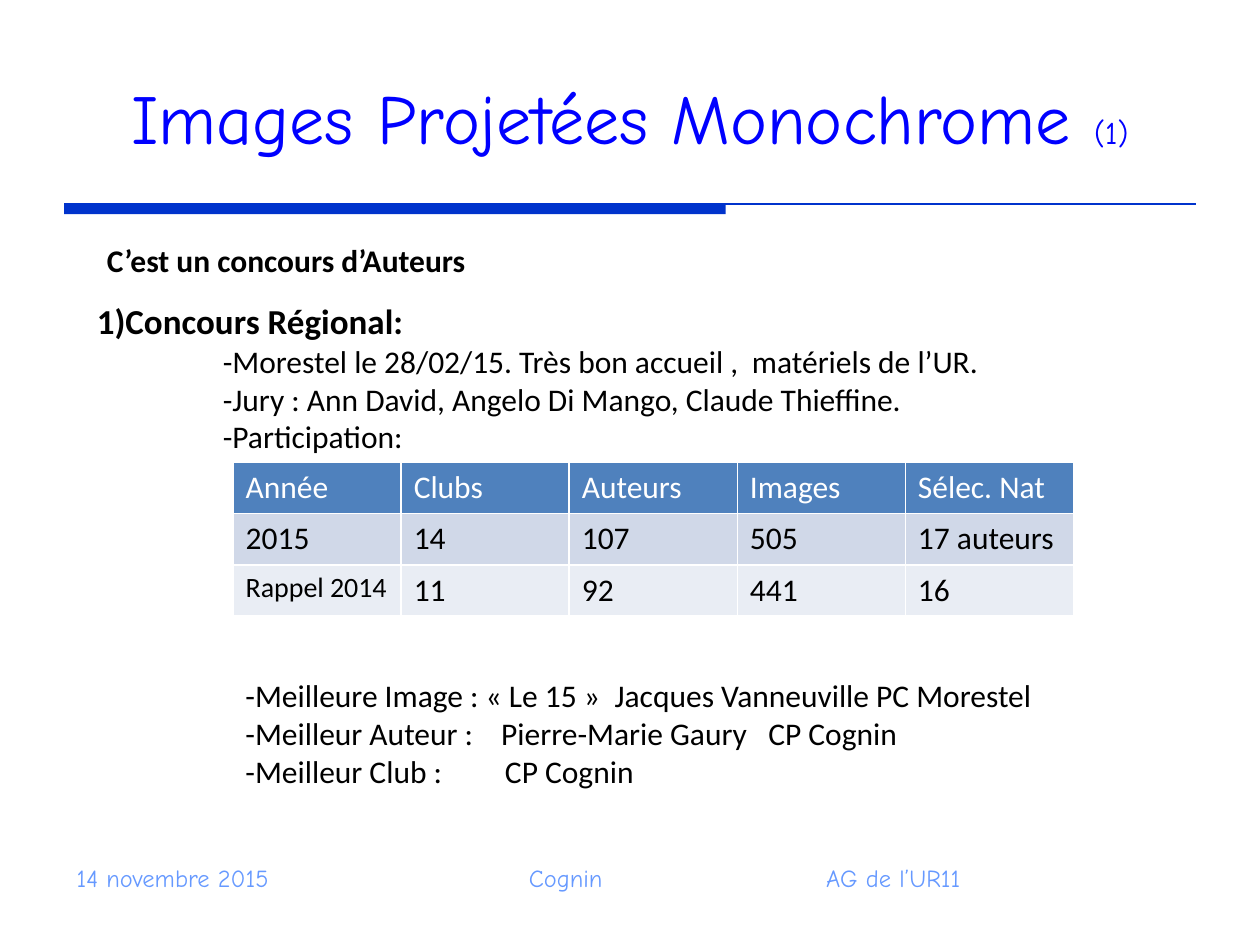
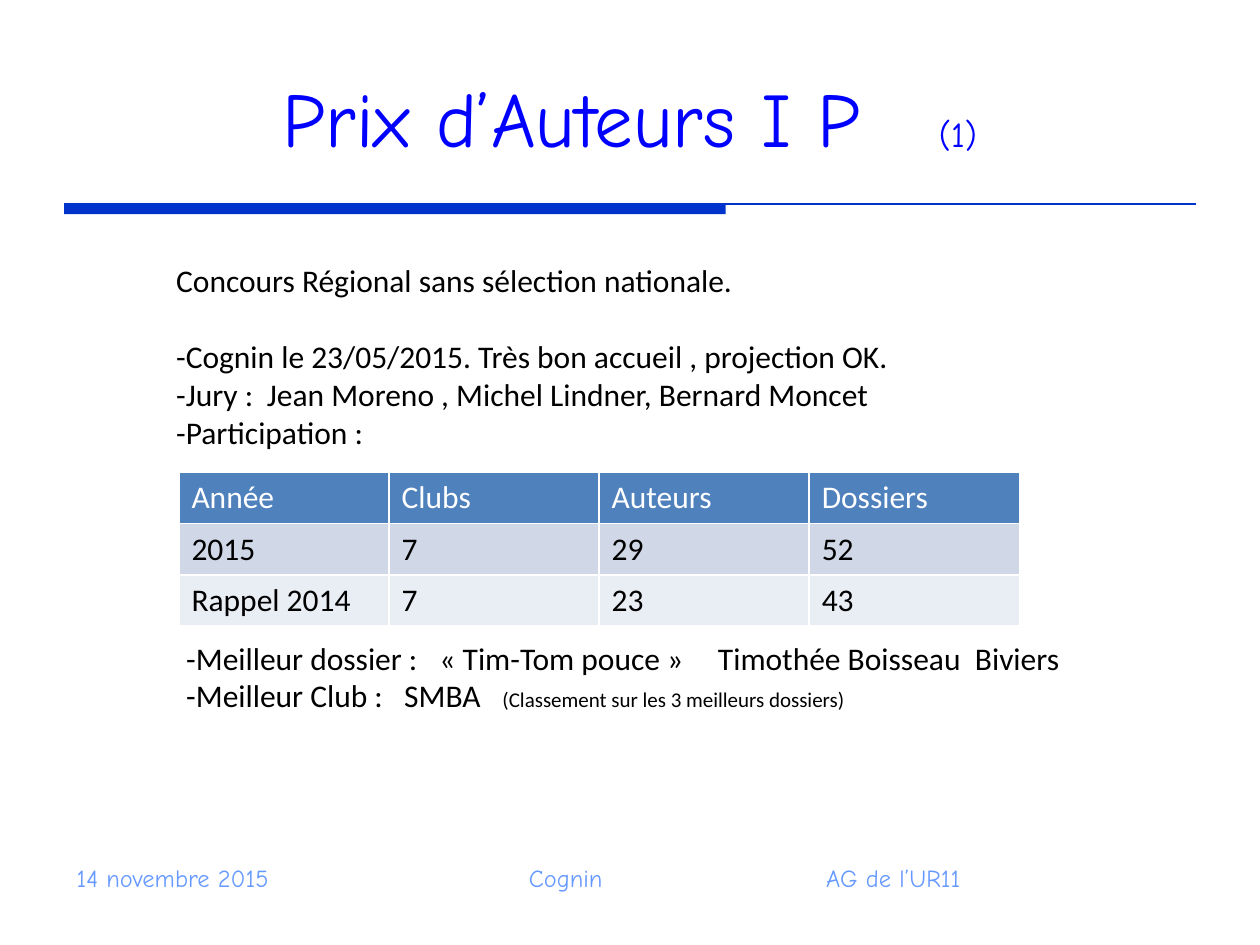
from lxml.etree import SubElement as Sub
from pptx import Presentation
from pptx.dml.color import RGBColor as RGB
from pptx.enum.shapes import MSO_CONNECTOR as LINK, MSO_SHAPE as SHAPE
from pptx.enum.text import MSO_ANCHOR as ANCHOR, PP_ALIGN as ALIGN
from pptx.oxml.ns import qn
from pptx.util import Inches, Pt

BLUE = RGB(0x00, 0x00, 0xFF)
BAND = RGB(0x00, 0x33, 0xCC)
PALE = RGB(0x66, 0x99, 0xFF)
BLACK = RGB(0x00, 0x00, 0x00)
WHITE = RGB(0xFF, 0xFF, 0xFF)
ROWS = [RGB(0x4F, 0x81, 0xBD), RGB(0xD0, 0xD8, 0xE8), RGB(0xE9, 0xED, 0xF4)]
BODY, COMIC = "Calibri", "Comic Neue"

deck = Presentation()
deck.slide_width, deck.slide_height = Inches(10), Inches(7.5)
# The grid has 100 columns and 100 rows.
COL, ROW = deck.slide_width / 100, deck.slide_height / 100


def frame(slide, x, y, w, h):
    """Add a wrapping text box, placed in grid units, and return its frame."""
    box = slide.shapes.add_textbox(*map(int, (x * COL, y * ROW, w * COL, h * ROW)))
    box.text_frame.word_wrap = True
    return box.text_frame


def write(tf, text, size=18, face=BODY, color=BLACK, bold=False, align=ALIGN.LEFT,
          stops=(), before=0, tail="", small=12, spread=0):
    """Add a paragraph; stops are in columns, spread widens the last space, tail is small."""
    para = tf.paragraphs[0] if not tf.text else tf.add_paragraph()
    para.alignment = align
    if before:
        para.space_before = Pt(before)
    if stops:
        tabs = Sub(para._p.get_or_add_pPr(), qn("a:tabLst"))
        for stop in stops:
            Sub(tabs, qn("a:tab"), pos=str(int(stop * COL)), algn="l")
    for part, pts, wide in ((text, size, 0), (" " if spread else "", size, spread),
                            (tail, small, 0)):
        if part:
            run = para.add_run()
            run.text = part
            font = run.font
            font.size, font.name, font.bold = Pt(pts), face, bold
            font.color.rgb = color
            if wide:
                run._r.get_or_add_rPr().set("spc", str(wide * 100))


pages = [
    dict(title="Images Projetées Monochrome ", size=40, small=18, spread=0,
         left=18.5, top=48.93,
         grid=[["Année", "Clubs", "Auteurs", "Images", "Sélec. Nat"],
               ["2015", "14", "107", "505", "17 auteurs"],
               ["Rappel 2014", "11", "92", "441", "16"]],
         label=16,
         texts=[
             ((6.7, 31.07, 80, 22), [
                 ("1)Concours Régional:", dict(size=20, bold=True)),
                 ("\t-Morestel le 28/02/15. Très bon accueil ,\tmatériels de l’UR.",
                  dict(stops=(10, 52))),
                 ("\t-Jury : Ann David, Angelo Di Mango, Claude Thieffine.",
                  dict(stops=(10,))),
                 ("\t-Participation:", dict(stops=(10,)))]),
             ((7.5, 24.8, 35, 5.33), [
                 ("C’est un concours d’Auteurs", dict(bold=True))]),
             ((18.5, 70.93, 70, 13.47), [
                 ("-Meilleure Image : «\u00a0Le 15\u00a0»\tJacques Vanneuville PC Morestel".replace("\u00a0", " "),
                  dict(stops=(29.3,))),
                 ("-Meilleur Auteur :\tPierre-Marie Gaury\tCP Cognin",
                  dict(stops=(20.3, 41.5))),
                 ("-Meilleur Club :\tCP Cognin", dict(stops=(20.6,)))])]),
    dict(title="Prix d’Auteurs I P", size=44, small=20, spread=30,
         left=14.2, top=50,
         grid=[["Année", "Clubs", "Auteurs", "Dossiers"],
               ["2015", "7", "29", "52"],
               ["Rappel 2014", "7", "23", "43"]],
         label=18,
         texts=[
             ((13, 26.93, 65, 25.6), [
                 ("Concours Régional sans sélection nationale.", {}),
                 ("-Cognin le 23/05/2015. Très bon accueil , projection OK.",
                  dict(before=22)),
                 ("-Jury :\tJean Moreno , Michel Lindner, Bernard Moncet",
                  dict(stops=(7.2,))),
                 ("-Participation :", {})]),
             ((13.8, 66.93, 76, 9.47), [
                 ("-Meilleur dossier :\t« Tim-Tom pouce »\tTimothée Boisseau\tBiviers",
                  dict(stops=(20.1, 42.2, 62.6))),
                 ("-Meilleur Club :\tSMBA\t",
                  dict(stops=(17.3, 25.1),
                       tail="(Classement sur les 3 meilleurs dossiers)"))])]),
]
feet = [("14 novembre 2015", 5.1, ALIGN.LEFT), ("Cognin", 32.7, ALIGN.CENTER),
        ("AG de l’UR11", 58.7, ALIGN.CENTER)]

for page in pages:
    slide = deck.slides.add_slide(deck.slide_layouts[6])
    shapes = slide.shapes

    # Rule under the title: a thick band, then a thin line
    band = shapes.add_shape(SHAPE.RECTANGLE, *map(int, (
        5.1 * COL, 21.6 * ROW, 52.5 * COL, 1.07 * ROW)))
    band.shadow.inherit = False
    band.fill.solid()
    band.fill.fore_color.rgb = BAND
    band.line.fill.background()
    rule = shapes.add_connector(LINK.STRAIGHT, *map(int, (
        5.1 * COL, 21.6 * ROW, 94.9 * COL, 21.6 * ROW)))
    rule.line.color.rgb, rule.line.width = BAND, Pt(1.5)
    Sub(rule._element.spPr, qn("a:effectLst"))

    for text, x, align in feet:
        write(frame(slide, x, 90.67, 24.4, 4.53), text, size=14, face=COMIC,
              color=PALE, align=align)

    head = frame(slide, 5, 4, 90, 16.67)
    head.vertical_anchor = ANCHOR.MIDDLE
    write(head, page["title"], size=page["size"], face=COMIC, color=BLUE,
          align=ALIGN.CENTER, tail="(1)", small=page["small"], spread=page["spread"])

    for place, lines in page["texts"]:
        tf = frame(slide, *place)
        for text, form in lines:
            write(tf, text, **form)

    grid = page["grid"]
    count = len(grid[0])
    table = shapes.add_table(len(grid), count, *map(int, (
        page["left"] * COL, page["top"] * ROW, 66.7 * COL, 16.27 * ROW))).table
    table.first_row = table.horz_banding = False
    for r, line in enumerate(grid):
        for c, text in enumerate(line):
            cell = table.cell(r, c)
            for side in "LRTB":
                edge = Sub(cell._tc.get_or_add_tcPr(), qn("a:ln" + side), w=str(Pt(1)))
                Sub(Sub(edge, qn("a:solidFill")), qn("a:srgbClr"), val=str(WHITE))
            cell.fill.solid()
            cell.fill.fore_color.rgb = ROWS[r]
            write(cell.text_frame, text, color=BLACK if r else WHITE,
                  size=page["label"] if (r, c) == (2, 0) else 18)

deck.save("out.pptx")
